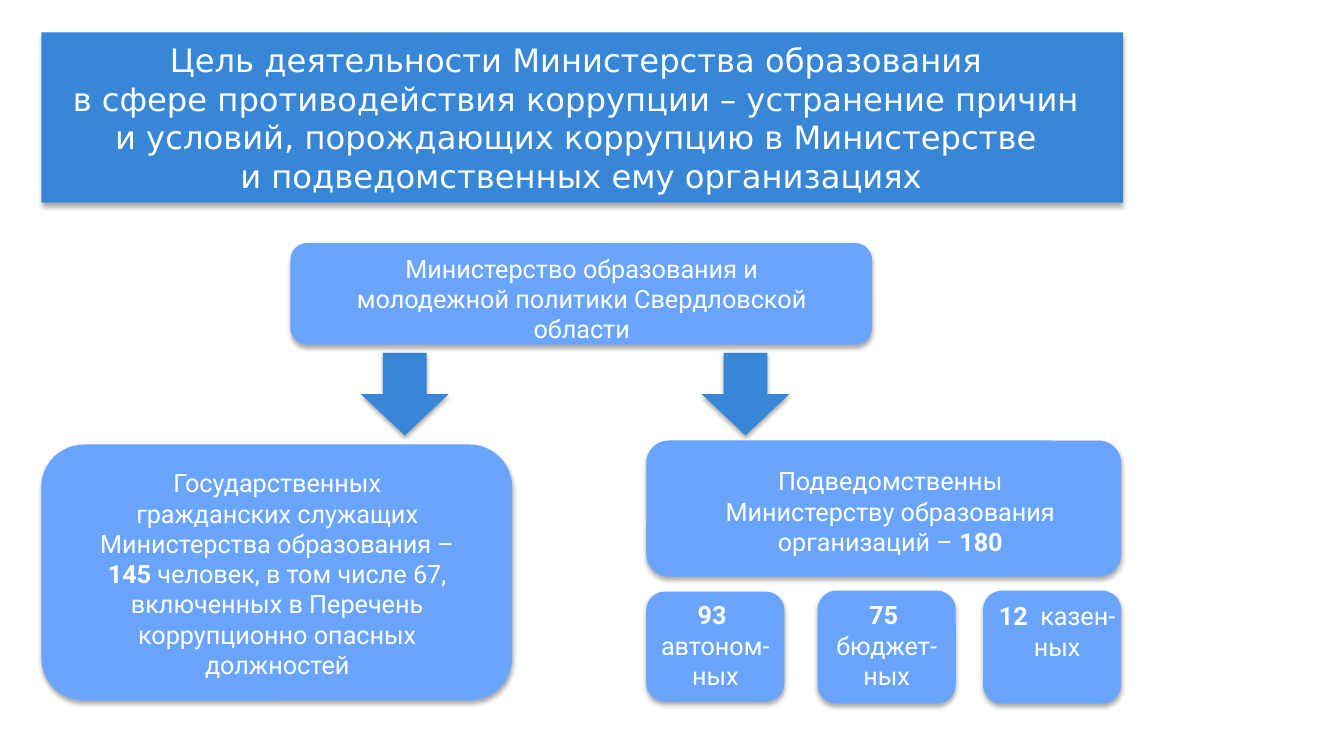
from dataclasses import dataclass

import lxml.etree
import pptx
import pptx.dml.color
import pptx.enum.shapes
import pptx.enum.text
import pptx.oxml.ns
import pptx.util

Inches = pptx.util.Inches
Preset = pptx.enum.shapes.MSO_SHAPE

COLORS = {"accent": "3887D6", "box": "69A5FF", "text": "FFFFFF", "shadow": "000000"}


@dataclass
class Panel:
    preset: Preset
    color: str
    left: float
    top: float
    width: float
    height: float


@dataclass
class Run:
    text: str
    bold: bool = False


@dataclass
class Label:
    left: float
    top: float
    width: float
    height: float
    paragraphs: list[list[Run]]
    font: str = "Roboto"
    size: float = 18


def rgb(name: str) -> pptx.dml.color.RGBColor:
    return pptx.dml.color.RGBColor.from_string(COLORS[name])


def add_shadow(shape) -> None:
    qn = pptx.oxml.ns.qn
    shape.shadow.inherit = False
    effects = shape._element.spPr.find(qn("a:effectLst"))
    shadow = lxml.etree.SubElement(
        effects, qn("a:outerShdw"), blurRad=str(pptx.util.Pt(3.5)),
        dist=str(pptx.util.Pt(2.2)), dir="5400000", rotWithShape="0")
    color = lxml.etree.SubElement(shadow, qn("a:srgbClr"), val=COLORS["shadow"])
    lxml.etree.SubElement(color, qn("a:alpha"), val="32000")


def draw_panel(slide, panel: Panel) -> None:
    shape = slide.shapes.add_shape(
        panel.preset, Inches(panel.left), Inches(panel.top),
        Inches(panel.width), Inches(panel.height))
    shape.fill.solid()
    shape.fill.fore_color.rgb = rgb(panel.color)
    shape.line.fill.background()
    add_shadow(shape)


def draw_label(slide, label: Label) -> None:
    box = slide.shapes.add_textbox(
        Inches(label.left), Inches(label.top), Inches(label.width), Inches(label.height))
    frame = box.text_frame
    frame.word_wrap = True
    frame.auto_size = pptx.enum.text.MSO_AUTO_SIZE.SHAPE_TO_FIT_TEXT
    for index, runs in enumerate(label.paragraphs):
        paragraph = frame.add_paragraph() if index else frame.paragraphs[0]
        paragraph.alignment = pptx.enum.text.PP_ALIGN.CENTER
        for part in runs:
            run = paragraph.add_run()
            run.text = part.text
            run.font.name = label.font
            run.font.size = pptx.util.Pt(label.size)
            run.font.bold = part.bold
            run.font.color.rgb = rgb("text")


# Title banner, ministry box, staff box and organisations box
PANELS = [
    Panel(Preset.RECTANGLE, "accent", 0.41, 0.32, 10.73, 1.69),
    Panel(Preset.ROUNDED_RECTANGLE, "box", 2.88, 2.41, 5.77, 1.01),
    Panel(Preset.ROUNDED_RECTANGLE, "box", 0.41, 4.41, 4.67, 2.54),
    Panel(Preset.ROUNDED_RECTANGLE, "box", 6.41, 4.37, 4.71, 1.35),
]

# Arrows from the ministry to both branches
PANELS += [Panel(Preset.DOWN_ARROW, "accent", left, 3.5, 0.87, 0.82) for left in (3.58, 6.96)]

TITLE_LINES = [
    "Цель деятельности Министерства образования ",
    "в сфере противодействия коррупции – устранение причин ",
    "и условий, порождающих коррупцию в Министерстве ",
    "и подведомственных ему организациях",
]

LABELS = [
    Label(0.58, 0.35, 10.38, 1.65, [[Run(line)] for line in TITLE_LINES], "DejaVu Sans", 23),
    Label(3.2, 2.46, 5.14, 1.01, [[
        Run("Министерство образования и молодежной политики Свердловской области")]]),
    Label(0.88, 4.59, 3.74, 2.22, [[
        Run("Государственных гражданских служащих Министерства образования – "),
        Run("145", True),
        Run(" человек, в том числе 67, включенных в Перечень коррупционно опасных должностей")]]),
    Label(6.96, 4.57, 3.74, 1.01, [[
        Run("Подведомственны Министерству образования организаций – "), Run("180", True)]]),
]

# Organisation types: box left, top, height; label left, top; count and name
ORGANISATION_TYPES = [
    (6.41, 5.87, 1.09, 6.41, 5.9, "93", "  автоном-ных"),
    (8.11, 5.86, 1.12, 8.11, 5.9, "75", "  бюджет-ных"),
    (9.75, 5.86, 1.12, 9.8, 5.91, "12", "  казен-ных"),
]
for left, top, height, label_left, label_top, count, name in ORGANISATION_TYPES:
    PANELS.append(Panel(Preset.ROUNDED_RECTANGLE, "box", left, top, 1.37, height))
    LABELS.append(Label(label_left, label_top, 1.37, 1.01, [[Run(count, True), Run(name)]]))


def main() -> None:
    presentation = pptx.Presentation()
    presentation.slide_width = Inches(13.33)
    presentation.slide_height = Inches(7.5)
    slide = presentation.slides.add_slide(presentation.slide_layouts[6])
    for panel in PANELS:
        draw_panel(slide, panel)
    for label in LABELS:
        draw_label(slide, label)
    presentation.save("out.pptx")


if __name__ == "__main__":
    main()
